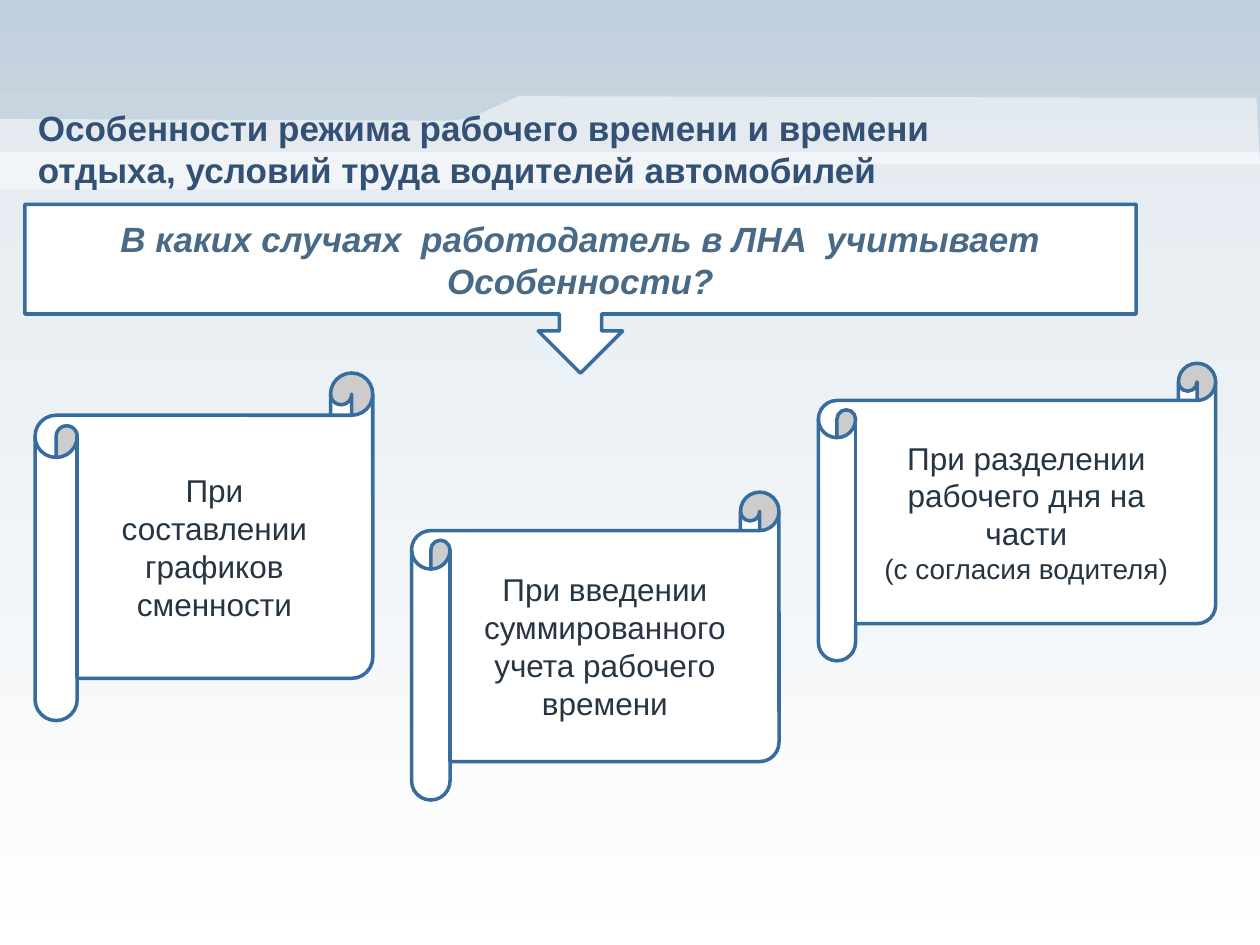
from dataclasses import dataclass

from lxml import etree
from pptx import Presentation
from pptx.dml.color import RGBColor
from pptx.enum.shapes import MSO_SHAPE
from pptx.enum.text import MSO_ANCHOR, MSO_AUTO_SIZE, PP_ALIGN
from pptx.oxml.ns import qn
from pptx.util import Pt

CALLOUT = MSO_SHAPE.DOWN_ARROW_CALLOUT
SCROLL = MSO_SHAPE.HORIZONTAL_SCROLL
MIDDLE = MSO_ANCHOR.MIDDLE
NO_AUTOFIT = MSO_AUTO_SIZE.NONE
LEFT = PP_ALIGN.LEFT
CENTER = PP_ALIGN.CENTER


@dataclass(frozen=True)
class Theme:
    font: str = "Arial"
    sky: RGBColor = RGBColor(0xC1, 0xD0, 0xDD)
    white: RGBColor = RGBColor(0xFF, 0xFF, 0xFF)
    title: RGBColor = RGBColor(0x33, 0x51, 0x75)
    question: RGBColor = RGBColor(0x49, 0x6A, 0x86)
    body: RGBColor = RGBColor(0x25, 0x35, 0x43)
    outline: RGBColor = RGBColor(0x37, 0x6D, 0x9E)
    heading_size: int = 20
    body_size: int = 18
    note_size: int = 16


theme = Theme()


def write_paragraph(paragraph, text, size, color, alignment, bold=False, italic=False):
    paragraph.text = text
    paragraph.alignment = alignment
    font = paragraph.font
    font.name = theme.font
    font.size = Pt(size)
    font.color.rgb = color
    font.bold = bold
    font.italic = italic


def add_panel(kind, left, top, width, height):
    shape = slide.shapes.add_shape(kind, Pt(left), Pt(top), Pt(width), Pt(height))
    shape.shadow.inherit = False
    shape.fill.solid()
    shape.fill.fore_color.rgb = theme.white
    shape.line.color.rgb = theme.outline
    shape.line.width = Pt(2)
    shape.text_frame.word_wrap = True
    shape.text_frame.vertical_anchor = MIDDLE
    return shape


presentation = Presentation()
presentation.slide_width = Pt(720)
presentation.slide_height = Pt(540)
slide = presentation.slides.add_slide(presentation.slide_layouts[5])

background = slide.background.fill
background.gradient()
background.gradient_angle = 270
for stop, color, position in zip(background.gradient_stops, (theme.sky, theme.white), (0, 1)):
    stop.color.rgb = color
    stop.position = position

lower_veil = [(0.5, 539.5), (722, 540), (720, 87), (0, 87)]
header_band = [
    (718.5, 55.5), (306.5, 55), (297, 55), (293.5, 55.5), (272, 65.5), (266, 68),
    (256, 69), (0, 68.5), (0, 108), (450.5, 108), (459.5, 106), (485.5, 94.5),
    (498, 93.5), (719.5, 93.5),
]
for outline in (lower_veil, header_band):
    builder = slide.shapes.build_freeform(*outline[0], scale=Pt(1))
    builder.add_line_segments(outline[1:], close=True)
    shape = builder.convert_to_shape()
    shape.shadow.inherit = False
    shape.line.fill.background()
    shape.fill.solid()
    shape.fill.fore_color.rgb = theme.white
    color_element = shape._element.spPr.find(qn("a:solidFill"))[0]
    etree.SubElement(color_element, qn("a:alpha"), val="50000")

title = slide.shapes.title
title.left, title.top, title.width, title.height = Pt(14.4), Pt(54.7), Pt(538.6), Pt(59.8)
title.text_frame.word_wrap = True
title.text_frame.auto_size = NO_AUTOFIT
title.text_frame.vertical_anchor = MIDDLE
write_paragraph(
    title.text_frame.paragraphs[0],
    "Особенности режима рабочего времени и времени отдыха, условий труда водителей автомобилей",
    theme.heading_size, theme.title, LEFT, bold=True,
)
slide.shapes._spTree.append(title._element)

question = add_panel(CALLOUT, 14.2, 116.8, 635, 96.5)
write_paragraph(
    question.text_frame.paragraphs[0],
    "В каких случаях  работодатель в ЛНА  учитывает Особенности?",
    theme.heading_size, theme.question, CENTER, bold=True, italic=True,
)

cases = [
    ((20, 213.2, 193, 198.6), "При составлении графиков сменности", None),
    ((235.2, 281.2, 210, 176), "При введении суммированного учета рабочего времени", None),
    ((467.7, 207.6, 227, 170), "При разделении рабочего дня на части", "(с согласия водителя)"),
]
for bounds, text, note in cases:
    frame = add_panel(SCROLL, *bounds).text_frame
    write_paragraph(frame.paragraphs[0], text, theme.body_size, theme.body, CENTER)
    if note:
        write_paragraph(frame.add_paragraph(), note, theme.note_size, theme.body, CENTER)

presentation.save("out.pptx")
